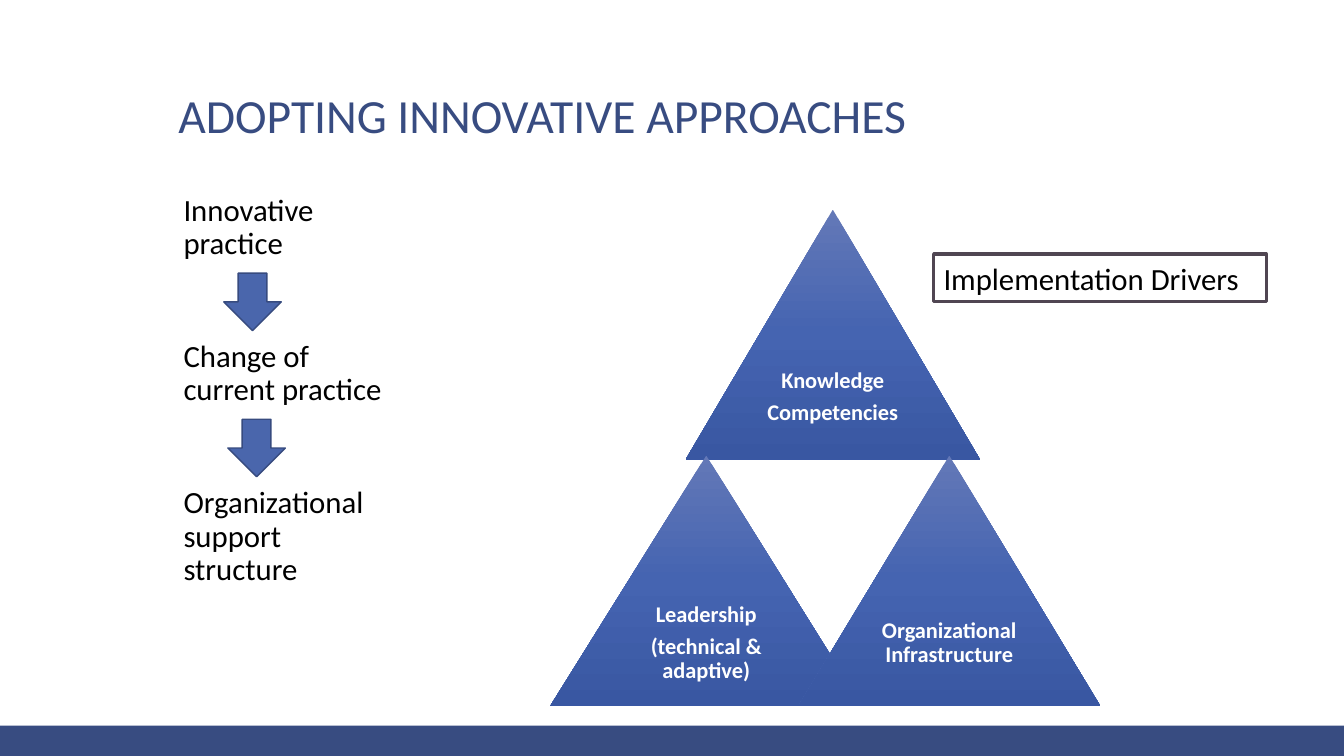
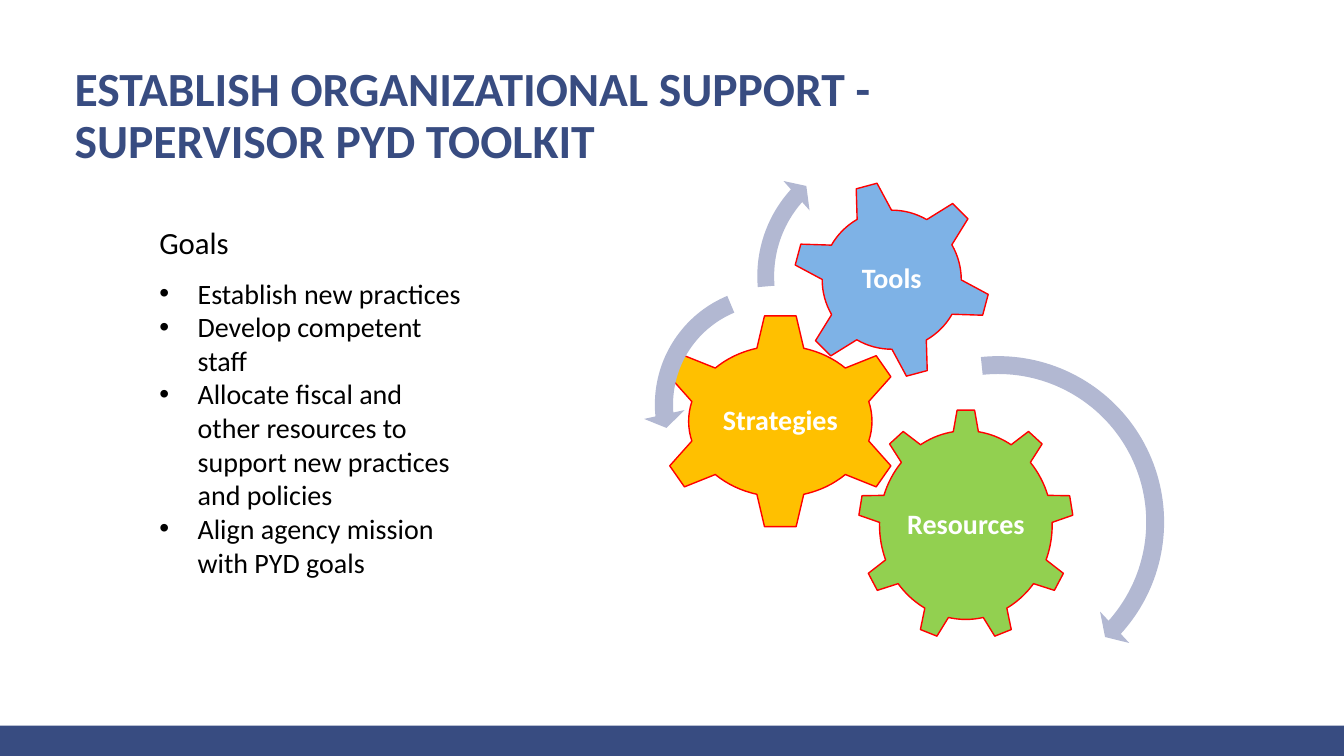
from lxml import etree
from pptx import Presentation
from pptx import util as u
from pptx.dml.color import RGBColor
from pptx.enum import shapes, text
from pptx.oxml import ns

COLORS = {
    "navy": "384C81", "black": "000000", "white": "FFFFFF",
    "arrow": "4A66AC", "arrow_edge": "374B7F", "frame": "504652",
    "gear_edge": "FF0000", "green": "92D050", "amber": "FFC000",
    "sky": "7EB2E6", "swirl": "B2B8D2",
    "peak": "6378B7", "middle": "4564B1", "base": "3957A2",
}
FONT = "Calibri"
PRESET = shapes.MSO_SHAPE
ALIGN = text.PP_ALIGN
ANCHOR = text.MSO_ANCHOR


def rgb(name):
    return RGBColor.from_string(COLORS[name])


class SlideBuilder:
    """Holds the deck style and the slide being built."""

    def __init__(self):
        self.deck = Presentation()
        self.deck.slide_width = u.Inches(13.33)
        self.deck.slide_height = u.Inches(7.5)
        self.page = None

    def new_slide(self):
        self.page = self.deck.slides.add_slide(self.deck.slide_layouts[1])

    def master_band(self):
        """Draw the bottom band and move it to the slide master."""
        band = self.shape(PRESET.RECTANGLE, (0, 7.2, 13.33, 0.3), "navy")
        band.element.nvSpPr.cNvPr.set("id", "99")
        self.deck.slide_master.shapes.element.insert(2, band.element)

    def place(self, item, at):
        item.left, item.top, item.width, item.height = map(u.Inches, at)

    def frame(self, box, anchor, inset=None):
        frame = box.text_frame
        frame.word_wrap = True
        frame.auto_size = text.MSO_AUTO_SIZE.NONE
        frame.vertical_anchor = anchor
        if inset is not None:
            frame.margin_left = frame.margin_right = u.Inches(inset)
            frame.margin_top = frame.margin_bottom = u.Inches(inset)
        return frame

    def para(self, frame, words, size, color="black", bold=False,
             align=ALIGN.LEFT, spacing=1.0, before=0, after=0):
        """Add a paragraph; a newline in the words is a line break."""
        first = frame.paragraphs[0]
        para = first if not first.runs else frame.add_paragraph()
        para.alignment = align
        para.line_spacing = spacing
        para.space_before, para.space_after = u.Pt(before), u.Pt(after)
        for number, line in enumerate(words.split("\n")):
            if number:
                para.add_line_break()
            span = para.add_run()
            span.text = line
            span.font.name, span.font.size = FONT, u.Pt(size)
            span.font.bold, span.font.color.rgb = bold, rgb(color)
        return para

    def bullet(self, para, mark=None, left=0.0, hang=0.0):
        props = para._p.get_or_add_pPr()
        props.set("marL", str(u.Inches(left)))
        props.set("indent", str(-u.Inches(hang)))
        if mark:
            etree.SubElement(props, ns.qn("a:buFont")).set("typeface", "Arial")
            etree.SubElement(props, ns.qn("a:buChar")).set("char", mark)
        else:
            etree.SubElement(props, ns.qn("a:buNone"))

    def title(self, words, at, bold=False):
        box = self.page.shapes.title
        self.place(box, at)
        self.para(self.frame(box, ANCHOR.BOTTOM), words, 34, "navy", bold,
                  spacing=0.9)

    def body(self, at):
        box = self.page.placeholders[1]
        self.place(box, at)
        return self.frame(box, ANCHOR.TOP)

    def shape(self, preset, at, fill=None, line=None, weight=1.0, turn=0):
        item = self.page.shapes.add_shape(preset, *map(u.Inches, at))
        item.shadow.inherit = False
        item.rotation = turn
        if fill:
            item.fill.solid()
            item.fill.fore_color.rgb = rgb(fill)
        else:
            item.fill.background()
        if line:
            item.line.color.rgb = rgb(line)
            item.line.width = u.Pt(weight)
        else:
            item.line.fill.background()
        return item

    def label(self, at, lines, size, inset):
        box = self.page.shapes.add_textbox(*map(u.Inches, at))
        frame = self.frame(box, ANCHOR.MIDDLE, inset)
        for line in lines:
            self.para(frame, line, size, "white", True, ALIGN.CENTER, 0.9,
                      after=0.35 * size)

    def triangle(self, at, lines):
        """Shaded triangle, labelled in the middle of its lower half."""
        item = self.shape(PRESET.ISOSCELES_TRIANGLE, at)
        item.fill.gradient()
        item.fill.gradient_angle = 270
        stops = item.element.spPr.find(".//" + ns.qn("a:gsLst"))
        del stops[:]
        for position, name in ((0, "peak"), (50, "middle"), (100, "base")):
            stop = etree.SubElement(stops, ns.qn("a:gs"))
            stop.set("pos", str(position * 1000))
            etree.SubElement(stop, ns.qn("a:srgbClr")).set("val", COLORS[name])
        left, top, width, height = at
        self.label((left + width / 4, top + height / 2, width / 2, height / 2),
                   lines, 16, 0.07)

    def gear(self, preset, at, fill, word, turn=0):
        """Gear with an upright label at its centre."""
        self.shape(preset, at, fill, "gear_edge", turn=turn)
        left, top, width, height = at
        self.label((left + 0.2 * width, top + height / 4,
                    0.6 * width, height / 2), [word], 20, 0.03)

    def swirl(self, preset, left, top, size, adjustments):
        item = self.shape(preset, (left, top, size, size), "swirl")
        for number, value in enumerate(adjustments):
            item.adjustments[number] = value


def adopting_slide(builder):
    builder.title("ADOPTING INNOVATIVE APPROACHES", (1.67, 0.23, 10, 1.25))

    # Steps, with room for an arrow between them
    steps = builder.body((1.67, 1.88, 2.41, 4.88))
    for number, step in enumerate(("Innovative practice",
                                   "Change of current practice",
                                   "Organizational support structure")):
        para = builder.para(steps, step, 22, spacing=0.9,
                            before=57 if number else 0)
        builder.bullet(para, left=0.05)

    # Pyramid of drivers
    builder.triangle((6.8, 2.08, 2.92, 2.48), ["Knowledge", "Competencies"])
    builder.triangle((5.46, 4.52, 3.09, 2.48),
                     ["Leadership", "(technical & adaptive)"])
    builder.triangle((7.92, 4.52, 2.99, 2.48),
                     ["Organizational Infrastructure"])

    # Framed caption
    caption = builder.shape(PRESET.RECTANGLE, (9.26, 2.52, 3.3, 0.47),
                            line="frame", weight=2.25)
    builder.para(builder.frame(caption, ANCHOR.MIDDLE),
                 "Implementation Drivers", 22)

    # Arrows between the steps
    for left, top in ((2.22, 2.71), (2.26, 4.16)):
        builder.shape(PRESET.DOWN_ARROW, (left, top, 0.57, 0.57),
                      "arrow", "arrow_edge")


def support_slide(builder):
    builder.title("ESTABLISH ORGANIZATIONAL SUPPORT - \nSUPERVISOR PYD TOOLKIT",
                  (0.64, 0.47, 10, 1.25), bold=True)

    # Goals
    goals = builder.body((1.48, 2.17, 3.29, 3.65))
    builder.bullet(builder.para(goals, "Goals", 22))
    for number, goal in enumerate((
            "Establish new practices",
            "Develop competent staff",
            "Allocate fiscal and other resources to support "
            "new practices and policies",
            "Align agency mission with PYD goals")):
        para = builder.para(goals, goal, 20, before=0 if number else 11)
        builder.bullet(para, "•", 0.38, 0.38)

    # Gears
    builder.gear(PRESET.GEAR_9, (8.51, 4.06, 2.14, 2.3), "green", "Resources")
    builder.gear(PRESET.GEAR_6, (6.51, 3.11, 2.46, 2.14), "amber", "Strategies")
    builder.gear(PRESET.GEAR_6, (7.86, 1.79, 1.97, 1.97), "sky", "Tools", 345)

    # Turning arrows
    builder.swirl(PRESET.CIRCULAR_ARROW, 8.13, 3.41, 3.54,
                  (0.05, 2.99, 25.25, 158.42, 0.06))
    builder.swirl(PRESET.LEFT_CIRCULAR_ARROW, 6.38, 2.73, 2.57,
                  (0.07, 4.3, 104.89, 148.38, 0.08))
    builder.swirl(PRESET.CIRCULAR_ARROW, 7.4, 1.35, 2.78,
                  (0.06, 3.94, 133.14, 105.08, 0.07))


def main():
    builder = SlideBuilder()
    builder.new_slide()
    builder.master_band()
    adopting_slide(builder)
    builder.new_slide()
    support_slide(builder)
    builder.deck.save("out.pptx")


if __name__ == "__main__":
    main()
